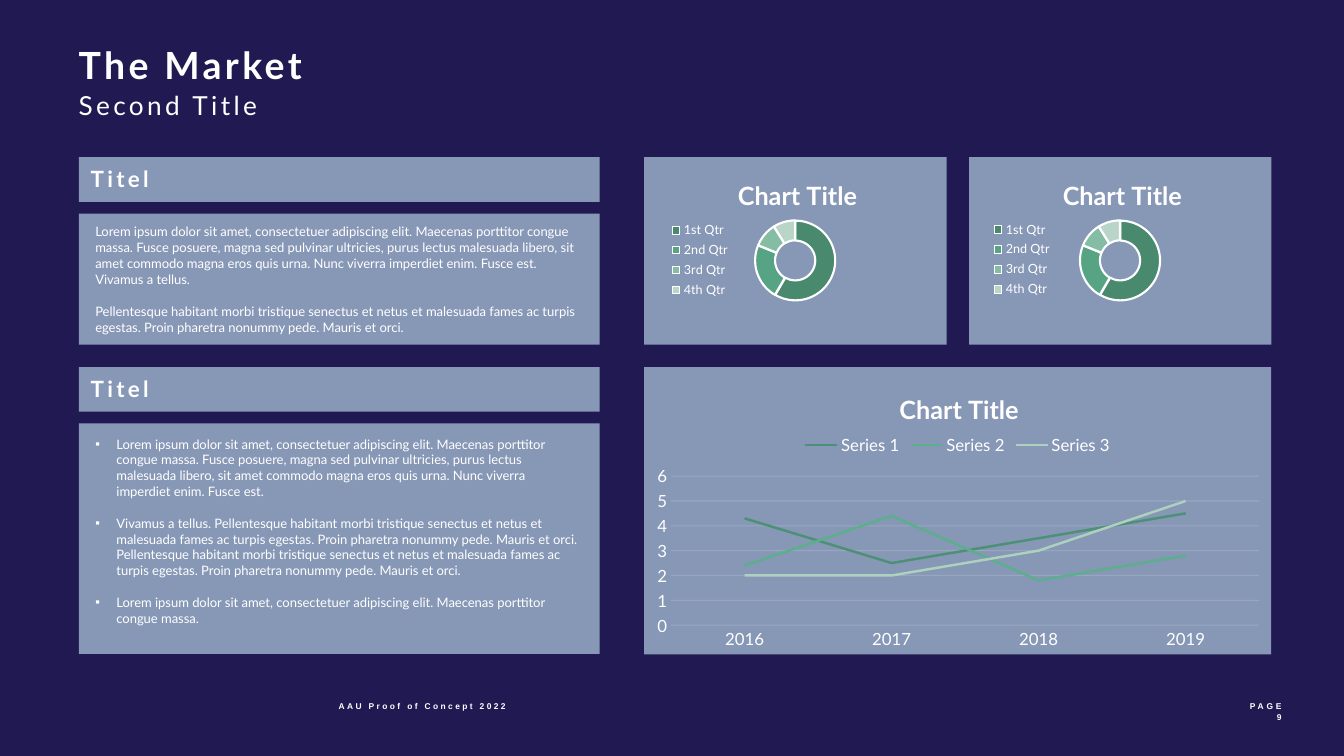
from dataclasses import dataclass
from typing import Any

import lxml.etree
import pptx
import pptx.chart.data
import pptx.dml.color
import pptx.enum.chart
import pptx.enum.shapes
import pptx.enum.text
import pptx.oxml
import pptx.oxml.ns
import pptx.util

Pt = pptx.util.Pt
qn = pptx.oxml.ns.qn
KIND = pptx.enum.chart.XL_CHART_TYPE
SPOT = pptx.enum.chart.XL_LEGEND_POSITION
TICK = pptx.enum.chart.XL_TICK_MARK
LEFT = pptx.enum.text.PP_ALIGN.LEFT
RIGHT = pptx.enum.text.PP_ALIGN.RIGHT

WIDE, HIGH = pptx.util.Inches(13.33), pptx.util.Inches(7.5)
HUES = {"back": "211A52", "panel": "8797B6", "text": "FFFFFF"}
RING_HUES = ["498A6F", "56A484", "85BDA4", "B9D5C7"]
LINE_HUES = ["4C9175", "5CAF8D", "ADD0BF"]

FONTS: dict[str, dict[str, Any]] = {
    "title": {"name": "Lato", "size": Pt(26.7), "bold": True},
    "second": {"name": "Lato", "size": Pt(18.7), "bold": False},
    "head": {"name": "Lato", "size": Pt(16), "bold": True},
    "body": {"name": "Lato", "size": Pt(9.3), "bold": False},
    "foot": {"name": "Arial", "size": Pt(6), "bold": True},
    "chart": {"name": "Lato", "size": Pt(18), "bold": True},
    "axis": {"name": "Lato", "size": Pt(12), "bold": False},
    "key": {"name": "Lato", "size": Pt(9), "bold": False},
}
BARE = dict.fromkeys(
    ("margin_left", "margin_top", "margin_right", "margin_bottom"), 0)

LOREM = ("Lorem ipsum dolor sit amet, consectetuer adipiscing elit. "
         "Maecenas porttitor congue massa.")
FUSCE = (" Fusce posuere, magna sed pulvinar ultricies, purus lectus malesuada "
         "libero, sit amet commodo magna eros quis urna. Nunc viverra imperdiet "
         "enim. Fusce est.")
VIVA = "Vivamus a tellus."
PELL = ("Pellentesque habitant morbi tristique senectus et netus et malesuada "
        "fames ac turpis egestas. Proin pharetra nonummy pede. Mauris et orci.")


@dataclass
class Box:
    """A frame in percent of the slide's width and height."""
    x: float
    y: float
    w: float
    h: float

    def emu(self) -> tuple[int, int, int, int]:
        return (int(self.x * WIDE / 100), int(self.y * HIGH / 100),
                int(self.w * WIDE / 100), int(self.h * HIGH / 100))


@dataclass
class Note:
    box: Box
    style: str
    lines: list[str]
    space: int = 0
    align: Any = LEFT


@dataclass
class Panel:
    top: float
    high: float
    lines: list[str]
    dots: bool


@dataclass
class Ring:
    x: float
    key: tuple[float, float]


NOTES = [
    Note(Box(5.85, 5.6, 40.8, 6), "title", ["The Market"], 240),
    Note(Box(5.85, 11.75, 21.7, 4.1), "second", ["Second Title"], 240),
    Note(Box(25.2, 92.8, 14.9, 4.1), "foot", ["AAU Proof of Concept 2022"], 170),
    Note(Box(83.72, 92.8, 11.63, 4.1), "foot", ["PAGE", "9"], 200, RIGHT),
]
PANELS = [
    Panel(20.8, 17.35, [LOREM + FUSCE + " " + VIVA, PELL], False),
    Panel(48.55, 30.5, [LOREM + FUSCE, f"{VIVA} {PELL} {PELL}", LOREM], True),
]
RINGS = [Ring(47.93, (0.08, 0.325)), Ring(72.1, (0.07, 0.32))]
QUARTERS = ["1st Qtr", "2nd Qtr", "3rd Qtr", "4th Qtr"]
YEARS = ["2016", "2017", "2018", "2019"]
RUNS = {"Series 1": [4.3, 2.5, 3.5, 4.5], "Series 2": [2.4, 4.4, 1.8, 2.8],
        "Series 3": [2, 2, 3, 5]}


def put(item: Any, values: dict[str, Any]) -> None:
    for name, value in values.items():
        setattr(item, name, value)


def paint(fill: Any, hue: str) -> None:
    fill.solid()
    fill.fore_color.rgb = pptx.dml.color.RGBColor.from_string(hue)


def style(font: Any, name: str) -> None:
    put(font, FONTS[name])
    paint(font.fill, HUES["text"])


def dot(para: Any) -> None:
    props = para._p.get_or_add_pPr()
    put_at = str(int(pptx.util.Inches(0.21)))
    props.set("marL", put_at)
    props.set("indent", "-" + put_at)
    lxml.etree.SubElement(props, qn("a:buFont")).set("typeface", "Arial")
    lxml.etree.SubElement(props, qn("a:buChar")).set("char", "▪")


def write(slide: Any, note: Note, frame: dict[str, Any] = BARE,
          form: dict[str, Any] | None = None, dots: bool = False) -> None:
    text = slide.shapes.add_textbox(*note.box.emu()).text_frame
    put(text, {"word_wrap": True, **frame})
    for place, line in enumerate(note.lines):
        para = text.paragraphs[0] if place == 0 else text.add_paragraph()
        put(para, {"alignment": note.align, **(form or {})})
        if form and place:
            para.space_before = form["line_spacing"]
        if dots:
            dot(para)
        run = para.add_run()
        run.text = line
        style(run.font, note.style)
        if note.space:
            run._r.get_or_add_rPr().set("spc", str(note.space))


def block(slide: Any, box: Box) -> None:
    shape = slide.shapes.add_shape(
        pptx.enum.shapes.MSO_SHAPE.RECTANGLE, *box.emu())
    shape.shadow.inherit = False
    paint(shape.fill, HUES["panel"])
    shape.line.fill.background()


def panel(slide: Any, item: Panel) -> None:
    low = item.top + 7.45
    block(slide, Box(5.87, item.top, 38.75, 5.9))
    block(slide, Box(5.87, low, 38.75, item.high))
    write(slide, Note(Box(6.75, item.top + 1.1, 37, 3.6), "head", ["Titel"], 240))
    write(slide, Note(Box(6.35, low + (1 if item.dots else 0.7), 37.4,
                          item.high - 1.6), "body", item.lines),
          {}, {"line_spacing": Pt(11.3)}, item.dots)


def lay(part: Any, after: str, x: float, y: float,
        w: float = 0, h: float = 0, inner: bool = False) -> None:
    """Place a chart part by shares of the chart's size."""
    for old in part.findall(qn("c:layout")):
        part.remove(old)
    node = lxml.etree.Element(qn("c:layout"))
    spot = lxml.etree.SubElement(node, qn("c:manualLayout"))
    pairs = [("xMode", "edge"), ("yMode", "edge"), ("x", x), ("y", y)]
    if inner:
        pairs.insert(0, ("layoutTarget", "inner"))
    if w:
        pairs += [("w", w), ("h", h)]
    for tag, value in pairs:
        lxml.etree.SubElement(spot, qn("c:" + tag)).set("val", str(value))
    prior = part.find(qn(after)) if after else None
    if prior is None:
        part.insert(0, node)
    else:
        prior.addnext(node)


def plot(slide: Any, box: Box, kind: Any, names: list[str],
         runs: dict[str, list[float]], font: str, title: tuple[float, float],
         area: tuple[float, float, float, float]) -> Any:
    data = pptx.chart.data.CategoryChartData()
    data.categories = names
    for name, values in runs.items():
        data.add_series(name, values)
    chart = slide.shapes.add_chart(kind, *box.emu(), data).chart
    style(chart.font, font)
    back = pptx.oxml.parse_xml(
        f'<c:spPr {pptx.oxml.ns.nsdecls("c", "a")}><a:solidFill><a:srgbClr '
        f'val="{HUES["panel"]}"/></a:solidFill><a:ln><a:noFill/></a:ln></c:spPr>')
    chart._chartSpace.find(qn("c:txPr")).addprevious(back)
    run = chart.chart_title.text_frame.paragraphs[0].add_run()
    run.text = "Chart Title"
    style(run.font, "chart")
    chart.has_legend = True
    put(chart.legend, {"position": SPOT.TOP, "include_in_layout": False})
    style(chart.legend.font, font)
    lay(chart.chart_title._element, "c:tx", *title)
    lay(chart._chartSpace.chart.plotArea, "", *area, inner=True)
    return chart


def ring(slide: Any, item: Ring) -> None:
    chart = plot(slide, Box(item.x, 20.8, 22.5, 24.8), KIND.DOUGHNUT, QUARTERS,
                 {"Series 1": [59, 23, 10, 9]}, "key", (0.295, 0.085),
                 (0.367, 0.337, 0.265, 0.428))
    chart.legend.position = SPOT.BOTTOM
    lay(chart.legend._element, "c:legendPos", *item.key, 0.21, 0.45)
    series = chart.plots[0].series[0]
    for place, hue in enumerate(RING_HUES):
        form = series.points[place].format
        paint(form.fill, hue)
        paint(form.line.fill, HUES["text"])
        form.line.width = Pt(1.5)
    burst = lxml.etree.Element(qn("c:explosion"))
    burst.set("val", "1")
    series._element.find(qn("c:dPt")).addprevious(burst)


def trend(slide: Any) -> None:
    chart = plot(slide, Box(47.93, 48.55, 46.65, 38), KIND.LINE, YEARS, RUNS,
                 "axis", (0.4, 0.07), (0.043, 0.38, 0.938, 0.519))
    for series, hue in zip(chart.plots[0].series, LINE_HUES):
        series.smooth = False
        paint(series.format.line.fill, hue)
        series.format.line.width = Pt(1.75)
    for axis in (chart.category_axis, chart.value_axis):
        put(axis, {"major_tick_mark": TICK.NONE, "minor_tick_mark": TICK.NONE})
        axis.format.line.fill.background()
        style(axis.tick_labels.font, "axis")
    put(chart.value_axis,
        {"minimum_scale": 0, "maximum_scale": 6, "major_unit": 1})
    grid = chart.value_axis.major_gridlines.format.line
    paint(grid.fill, HUES["text"])
    grid.width = Pt(0.75)
    for tone in grid._ln.iter(qn("a:srgbClr")):
        lxml.etree.SubElement(tone, qn("a:alpha")).set("val", "15000")


def main() -> None:
    deck = pptx.Presentation()
    put(deck, {"slide_width": WIDE, "slide_height": HIGH})
    slide = deck.slides.add_slide(deck.slide_layouts[6])
    paint(slide.background.fill, HUES["back"])
    for item in PANELS:
        panel(slide, item)
    for item in RINGS:
        ring(slide, item)
    trend(slide)
    for note in NOTES:
        write(slide, note)
    deck.save("out.pptx")


if __name__ == "__main__":
    main()
